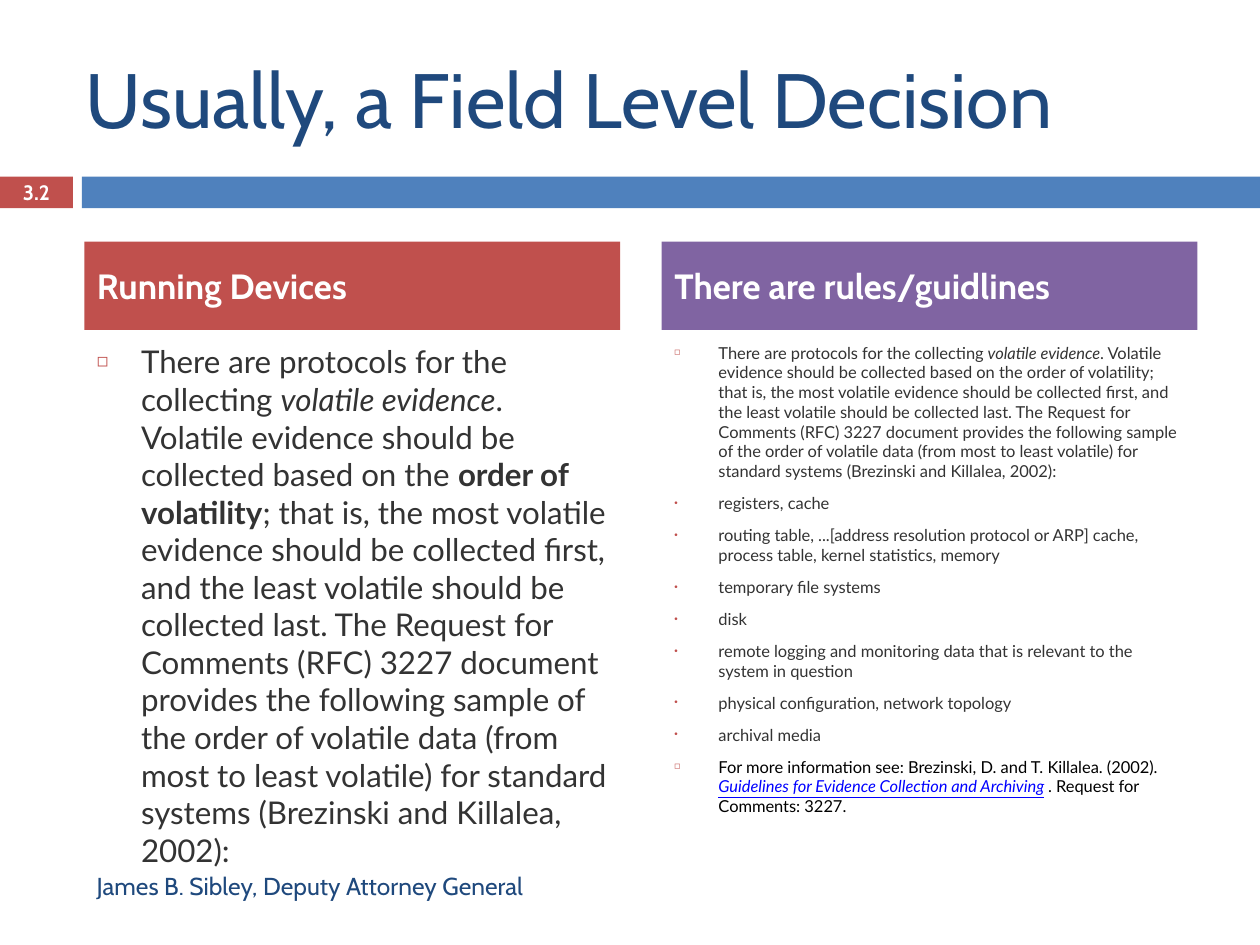
from dataclasses import dataclass

from lxml import etree
from pptx import Presentation
from pptx.dml.color import RGBColor
from pptx.enum.shapes import MSO_SHAPE
from pptx.enum.text import MSO_ANCHOR, MSO_AUTO_SIZE, PP_ALIGN
from pptx.oxml.ns import qn
from pptx.util import Cm, Pt

RECTANGLE = MSO_SHAPE.RECTANGLE
TOP, MIDDLE = MSO_ANCHOR.TOP, MSO_ANCHOR.MIDDLE
NO_AUTOFIT = MSO_AUTO_SIZE.NONE
LEFT, CENTER = PP_ALIGN.LEFT, PP_ALIGN.CENTER


@dataclass(frozen=True)
class Theme:
    heading_font: str = "Cabin"
    body_font: str = "Lato"
    navy: str = "1F497D"
    blue: str = "4F81BD"
    red: str = "C0504D"
    purple: str = "8064A2"
    white: str = "FFFFFF"
    gray: str = "333333"
    black: str = "000000"
    link: str = "0000FF"
    title_size: float = 44
    heading_size: float = 20
    large_size: float = 17.9
    footer_size: float = 14
    number_size: float = 11.9
    small_size: float = 9.4
    paragraph_gap: float = 7


@dataclass(frozen=True)
class Span:
    text: str
    color: str = Theme.gray
    bold: bool = False
    italic: bool = False
    underline: bool = False


class SlideBuilder:
    """Holds the theme and the current slide, and adds each kind of element."""

    def __init__(self, slide, theme):
        self.slide = slide
        self.theme = theme

    def place(self, shape, box, anchor):
        shape.left, shape.top, shape.width, shape.height = (Cm(length) for length in box)
        frame = shape.text_frame
        frame.word_wrap = True
        frame.auto_size = NO_AUTOFIT
        frame.vertical_anchor = anchor
        return frame

    def add_runs(self, paragraph, spans, font, size, alignment=LEFT):
        paragraph.alignment = alignment
        for span in spans:
            run = paragraph.add_run()
            run.text = span.text
            run.font.name = font
            run.font.size = Pt(size)
            run.font.bold = span.bold
            run.font.italic = span.italic
            run.font.underline = span.underline
            run.font.color.rgb = RGBColor.from_string(span.color)

    def fill(self, shape, color):
        shape.fill.solid()
        shape.fill.fore_color.rgb = RGBColor.from_string(color)
        shape.line.fill.background()

    def bar(self, box, color):
        shape = self.slide.shapes.add_shape(RECTANGLE, *(Cm(length) for length in box))
        shape.shadow.inherit = False
        self.fill(shape, color)

    def title(self, text, box):
        frame = self.place(self.slide.shapes.title, box, MIDDLE)
        self.add_runs(frame.paragraphs[0], [Span(text, self.theme.navy)],
                      self.theme.heading_font, self.theme.title_size)

    def heading(self, index, text, box, color):
        shape = self.slide.placeholders[index]
        self.fill(shape, color)
        paragraph = self.place(shape, box, MIDDLE).paragraphs[0]
        paragraph.space_before = Pt(0)
        self.add_runs(paragraph, [Span(text, self.theme.white, bold=True)],
                      self.theme.heading_font, self.theme.heading_size)

    def label(self, span, box, size, alignment=LEFT):
        shape = self.slide.shapes.add_textbox(0, 0, 0, 0)
        frame = self.place(shape, box, MIDDLE)
        self.add_runs(frame.paragraphs[0], [span], self.theme.heading_font, size, alignment)

    def bullet(self, paragraph, character):
        properties = paragraph._p.get_or_add_pPr()
        indent = Cm(0.89)
        properties.set("marL", str(indent))
        properties.set("indent", str(-indent))
        color = etree.SubElement(properties, qn("a:buClr"))
        etree.SubElement(color, qn("a:srgbClr"), val=self.theme.red)
        etree.SubElement(properties, qn("a:buSzPct"), val="60000")
        etree.SubElement(properties, qn("a:buChar"), char=character)

    def bullets(self, index, items, box, size):
        frame = self.place(self.slide.placeholders[index], box, TOP)
        for position, (character, spans) in enumerate(items):
            paragraph = frame.add_paragraph() if position else frame.paragraphs[0]
            self.bullet(paragraph, character)
            paragraph.space_before = Pt(self.theme.paragraph_gap if position else 0)
            self.add_runs(paragraph, spans, self.theme.body_font, size)


def main():
    theme = Theme()
    presentation = Presentation()
    presentation.slide_width, presentation.slide_height = Cm(25.4), Cm(19.05)
    slide = presentation.slides.add_slide(presentation.slide_layouts[4])
    builder = SlideBuilder(slide, theme)

    left, right, column_width = 1.7, 13.34, 10.8
    heading_top, heading_height, body_top = 4.87, 1.78, 6.78
    square, dot = "◻", "•"

    opening = [Span("There are protocols for the collecting "),
               Span("volatile evidence", italic=True)]
    based_on = ". Volatile evidence should be collected based on the "
    order = "order of volatility"
    explanation = (
        "; that is, the most volatile evidence should be collected first, and the least "
        "volatile should be collected last. The Request for Comments (RFC) 3227 document "
        "provides the following sample of the order of volatile data (from most to least "
        "volatile) for standard systems (Brezinski and Killalea, 2002):")
    volatility_order = [
        "registers, cache",
        "routing table, ...[address resolution protocol or ARP] cache, process table, "
        "kernel statistics, memory",
        "temporary file systems",
        "disk",
        "remote logging and monitoring data that is relevant to the system in question",
        "physical configuration, network topology",
        "archival media",
    ]
    reference = [
        Span("For more information see: Brezinski, D. and T. Killalea. (2002). ", theme.black),
        Span("Guidelines for Evidence Collection and Archiving", theme.link,
             italic=True, underline=True),
        Span(" . Request for Comments: 3227.", theme.black),
    ]
    protocols = opening + [Span(based_on), Span(order, bold=True), Span(explanation)]
    guidelines = [(square, opening + [Span(based_on + order + explanation)])]
    guidelines += [(dot, [Span(text)]) for text in volatility_order]
    guidelines.append((square, reference))

    builder.bar((0, 3.56, 1.47, 0.64), theme.red)
    builder.bar((1.65, 3.56, 23.75, 0.64), theme.blue)
    builder.title("Usually, a Field Level Decision", (1.47, 0.76, 22.66, 2.41))
    builder.heading(1, "Running Devices",
                    (left, heading_top, column_width, heading_height), theme.red)
    builder.heading(3, "There are rules/guidlines",
                    (right, heading_top, column_width, heading_height), theme.purple)
    builder.bullets(2, [(square, protocols)],
                    (left, body_top, column_width, 8.69), theme.large_size)
    builder.bullets(4, guidelines, (right, body_top, column_width, 9.96), theme.small_size)
    builder.label(Span("3.2", theme.white, bold=True),
                  (0, 3.53, 1.47, 0.69), theme.number_size, CENTER)
    builder.label(Span("James B. Sibley, Deputy Attorney General", theme.navy),
                  (left, 17.35, 15.06, 1.02), theme.footer_size)
    presentation.save("out.pptx")


if __name__ == "__main__":
    main()
